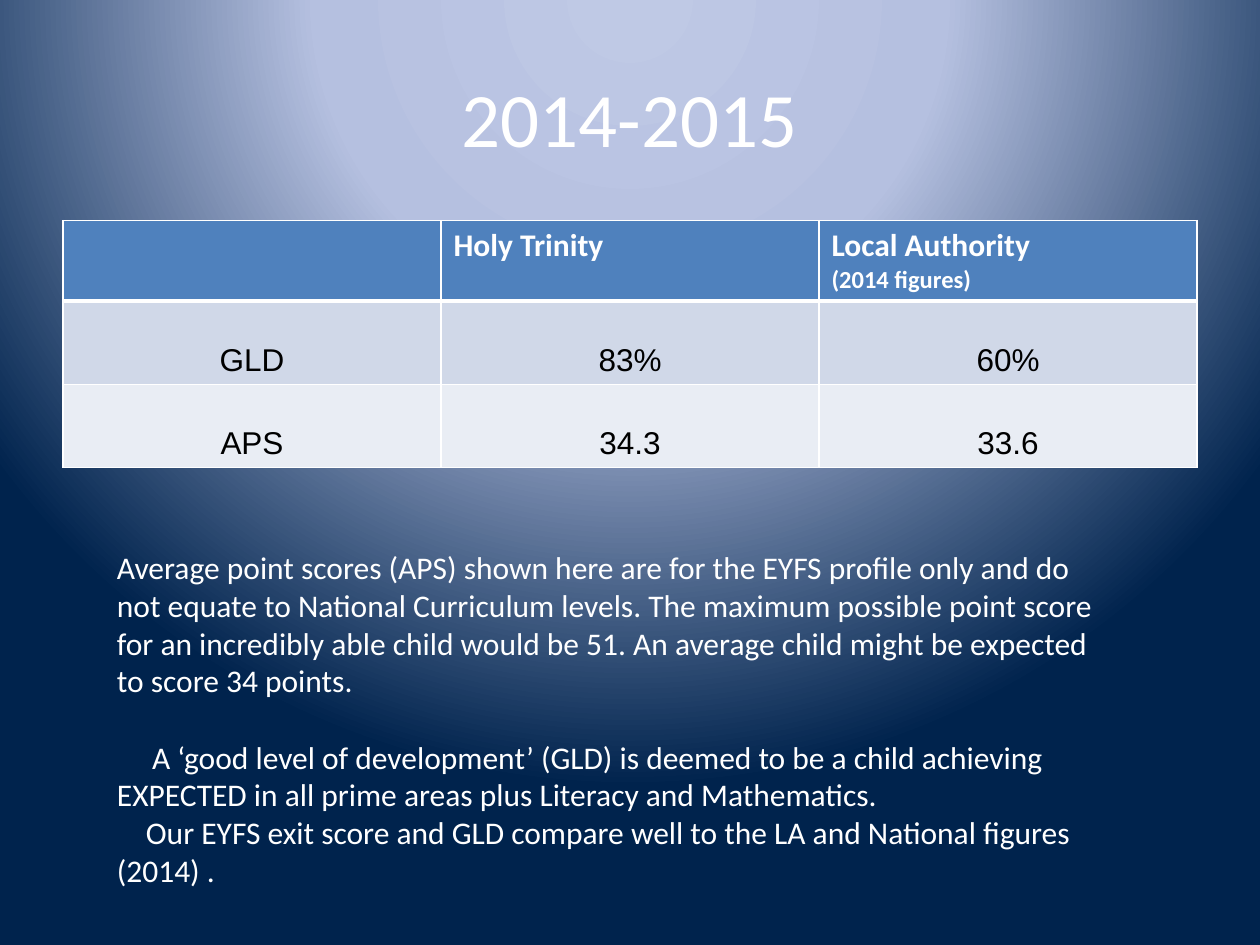
from dataclasses import dataclass

from lxml.etree import SubElement
from pptx import Presentation
from pptx.dml.color import RGBColor
from pptx.enum.text import MSO_ANCHOR, PP_ALIGN
from pptx.oxml.ns import qn
from pptx.util import Inches, Pt


@dataclass(frozen=True)
class Theme:
    """Colours, fonts and type sizes of the slide."""
    white: str = "FFFFFF"
    black: str = "000000"
    header: str = "4F81BD"
    bands: tuple = ("D0D8E8", "E9EDF4")
    gradient: tuple = ((0, "BFC9E5"), (40, "B5C0E0"), (100, "00234D"))
    font: str = "Calibri"
    figure_font: str = "Arial"
    title_size: int = 44
    body_size: int = 18
    note_size: int = 14
    paragraph_gap: int = 22


THEME = Theme()

HEADERS = [
    [],
    [("Holy Trinity", THEME.body_size)],
    [("Local Authority", THEME.body_size), ("(2014 figures)", THEME.note_size)],
]
FIGURES = [("GLD", "83%", "60%"), ("APS", "34.3", "33.6")]
NOTES = [
    ("Average point scores (APS) shown here are for the EYFS profile only and do "
     "not equate to National Curriculum levels. The maximum possible point score "
     "for an incredibly able child would be 51. An average child might be expected "
     "to score 34 points.", 0, 0),
    ("A ‘good level of development’ (GLD) is deemed to be a child achieving "
     "EXPECTED in all prime areas plus Literacy and Mathematics.",
     0.28, THEME.paragraph_gap),
    ("Our EYFS exit score and GLD compare well to the LA and National figures "
     "(2014) .", 0.23, 0),
]


def add_run(paragraph, text, size, color=THEME.white, font=THEME.font, bold=False):
    """Add one formatted run to a paragraph."""
    run = paragraph.add_run()
    run.text = text
    run.font.size = Pt(size)
    run.font.name = font
    run.font.bold = bold
    run.font.color.rgb = RGBColor.from_string(color)


def paragraph_at(text_frame, index):
    """Return the first paragraph for index 0, otherwise a new one."""
    return text_frame.add_paragraph() if index else text_frame.paragraphs[0]


def add_text_box(slide, left, top, width, height):
    """Add a wrapping text box and return its text frame."""
    shape = slide.shapes.add_textbox(
        Inches(left), Inches(top), Inches(width), Inches(height))
    shape.text_frame.word_wrap = True
    return shape.text_frame


def set_background(slide):
    """Fill the background with a circular gradient centred above the slide."""
    fill = slide.background.fill
    fill.gradient()
    gradient = slide.background._cSld.find(".//" + qn("a:gradFill"))
    for child in list(gradient):
        gradient.remove(child)
    stops = SubElement(gradient, qn("a:gsLst"))
    for position, color in THEME.gradient:
        stop = SubElement(stops, qn("a:gs"), pos=str(position * 1000))
        SubElement(stop, qn("a:srgbClr"), val=color)
    circle = SubElement(gradient, qn("a:path"), path="circle")
    SubElement(circle, qn("a:fillToRect"), l="50000", t="-80000", r="50000", b="180000")


def style_cell(cell, fill, top=1, bottom=1):
    """Give a cell white borders and a solid fill."""
    properties = cell._tc.get_or_add_tcPr()
    for side, width in (("L", 1), ("R", 1), ("T", top), ("B", bottom)):
        line = SubElement(properties, qn(f"a:ln{side}"), w=str(Pt(width)))
        solid = SubElement(line, qn("a:solidFill"))
        SubElement(solid, qn("a:srgbClr"), val=THEME.white)
    cell.fill.solid()
    cell.fill.fore_color.rgb = RGBColor.from_string(fill)


def add_title(slide, text):
    """Add the centred slide title."""
    text_frame = add_text_box(slide, 0.5, 0.3, 9, 1.25)
    text_frame.vertical_anchor = MSO_ANCHOR.MIDDLE
    paragraph = text_frame.paragraphs[0]
    paragraph.alignment = PP_ALIGN.CENTER
    add_run(paragraph, text, THEME.title_size)


def add_results_table(slide):
    """Add the table of school and local authority results."""
    table = slide.shapes.add_table(
        len(FIGURES) + 1, len(HEADERS),
        Inches(0.5), Inches(1.75), Inches(9), Inches(1.96)).table
    for row, height in zip(table.rows, (0.64, 0.66, 0.66)):
        row.height = Inches(height)
    for column, lines in enumerate(HEADERS):
        cell = table.cell(0, column)
        style_cell(cell, THEME.header, bottom=3)
        for index, (text, size) in enumerate(lines):
            add_run(paragraph_at(cell.text_frame, index), text, size, bold=True)
    for row, (values, band) in enumerate(zip(FIGURES, THEME.bands), start=1):
        for column, value in enumerate(values):
            cell = table.cell(row, column)
            style_cell(cell, band, top=3 if row == 1 else 1)
            cell.vertical_anchor = MSO_ANCHOR.BOTTOM
            paragraph = cell.text_frame.paragraphs[0]
            paragraph.alignment = PP_ALIGN.CENTER
            add_run(paragraph, value, THEME.body_size, THEME.black, THEME.figure_font)


def add_notes_text(slide):
    """Add the explanatory paragraphs below the table."""
    text_frame = add_text_box(slide, 0.83, 4.3, 8.03, 2.83)
    for index, (text, indent, gap) in enumerate(NOTES):
        paragraph = paragraph_at(text_frame, index)
        if indent:
            paragraph._p.get_or_add_pPr().set("indent", str(Inches(indent)))
        if gap:
            paragraph.space_before = Pt(gap)
        add_run(paragraph, text, THEME.body_size)


def main():
    """Build and save the presentation."""
    presentation = Presentation()
    presentation.slide_width = Inches(10)
    presentation.slide_height = Inches(7.5)
    slide = presentation.slides.add_slide(presentation.slide_layouts[6])
    set_background(slide)
    add_title(slide, "2014-2015")
    add_results_table(slide)
    add_notes_text(slide)
    presentation.save("out.pptx")


if __name__ == "__main__":
    main()
